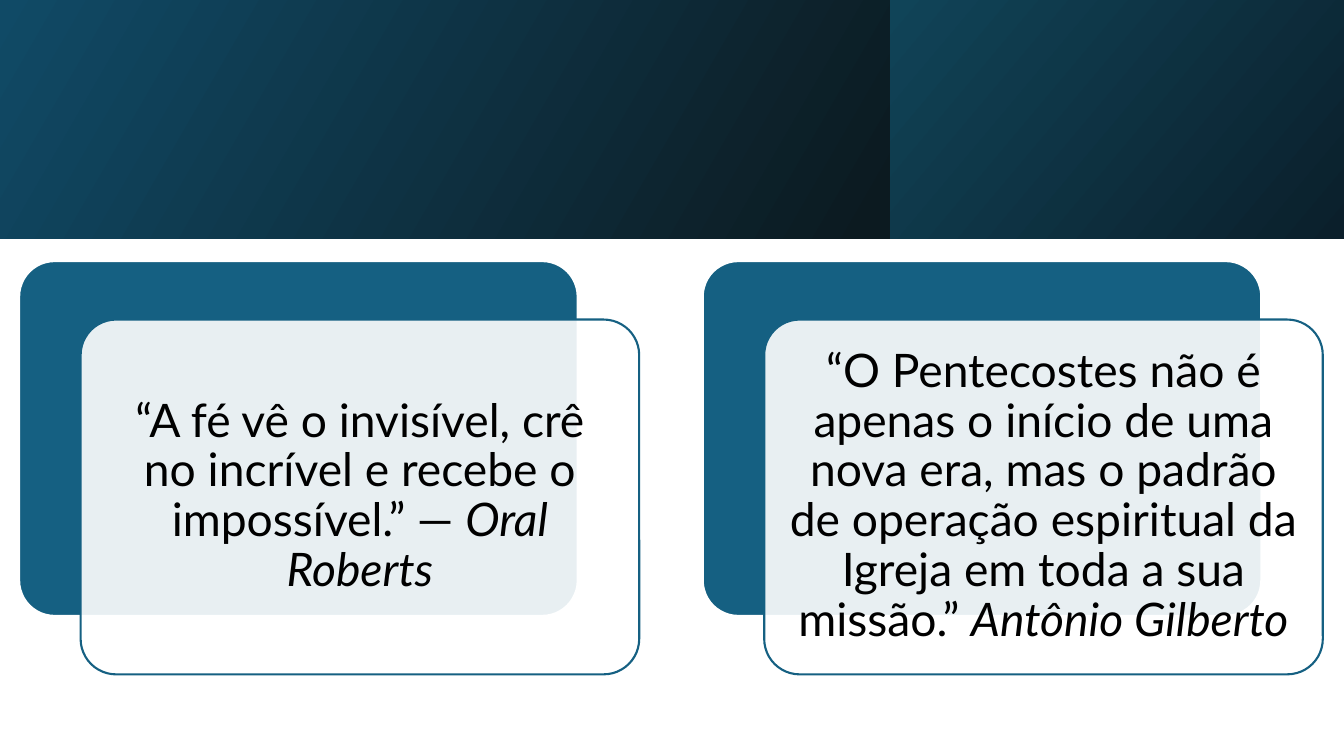
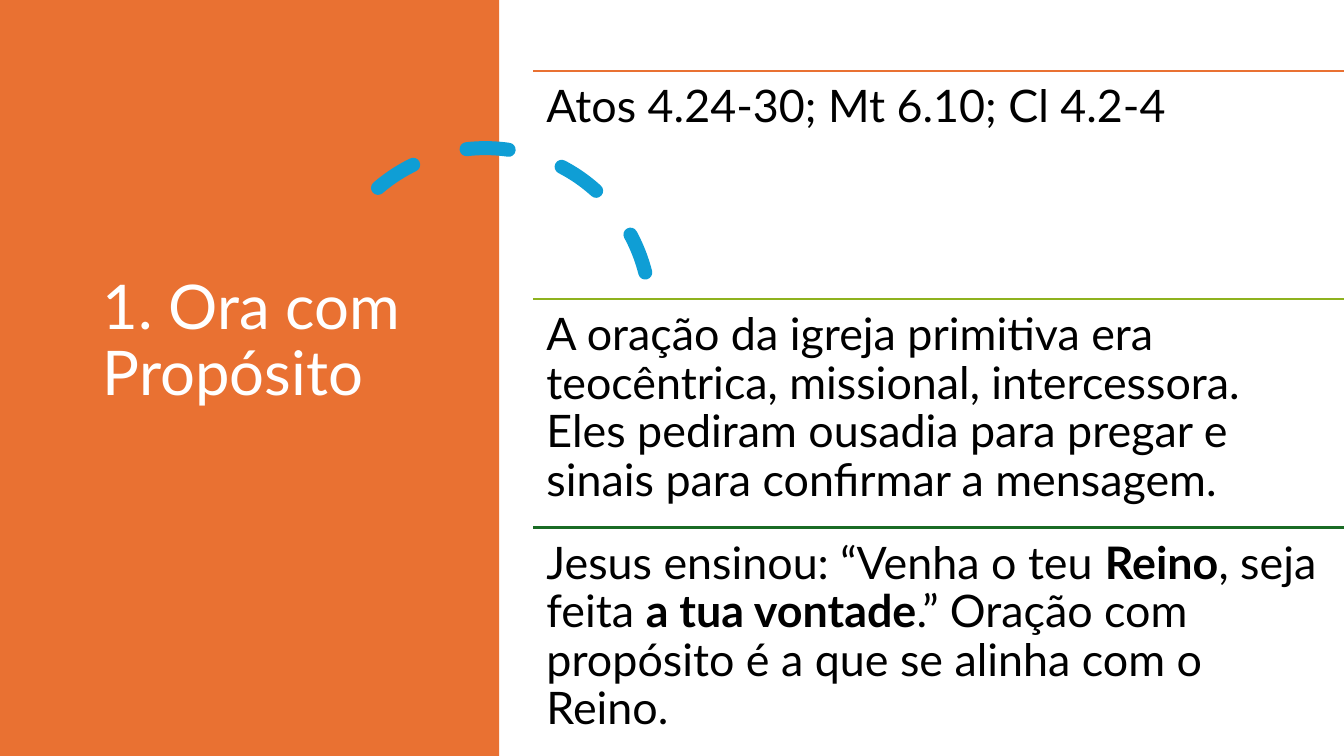
import pptx
import pptx.dml.color
import pptx.enum.dml
import pptx.enum.shapes
import pptx.enum.text
import pptx.oxml.ns
import pptx.util
from lxml import etree

Inches = pptx.util.Inches
Pt = pptx.util.Pt
Shapes = pptx.enum.shapes.MSO_SHAPE
Align = pptx.enum.text.PP_ALIGN
Anchor = pptx.enum.text.MSO_ANCHOR
qn = pptx.oxml.ns.qn

# Shared style
FONT = "Lato"
WIDTH, HEIGHT = 13.33, 7.5
BLACK, WHITE = "000000", "FFFFFF"
TEAL, ORANGE, SKY = "156082", "E97132", "0F9ED5"
LIME, GREEN = "8EB21E", "196B24"
RULE_WEIGHT = 1.5
BLANK_LAYOUT, TITLE_LAYOUT = 6, 5

QUOTES = [
    [("“A fé vê o invisível, crê no incrível e recebe o impossível.” — ", ""),
     ("Oral Roberts", "italic")],
    [("“O Pentecostes não é apenas o início de uma nova era, mas o padrão de "
      "operação espiritual da Igreja em toda a sua missão.” ", ""),
     ("Antônio Gilberto", "italic")],
]
POINTS = [
    (ORANGE, [("Atos 4.24-30; Mt 6.10; Cl 4.2-4", "")]),
    (LIME, [("A oração da igreja primitiva era teocêntrica, missional, "
             "intercessora. Eles pediram ousadia para pregar e sinais para "
             "confirmar a mensagem.", "")]),
    (GREEN, [("Jesus ensinou: “Venha o teu ", ""), ("Reino", "bold"),
             (", seja feita ", ""), ("a tua vontade", "bold"),
             (".” Oração com propósito é a que se alinha com o Reino.", "")]),
]


def rgb(value):
    return pptx.dml.color.RGBColor.from_string(value)


def add_panel(slide, kind, box, fill=None, line=None, weight=RULE_WEIGHT):
    """Preset shape without shadow; no colour means no fill or no line."""
    panel = slide.shapes.add_shape(kind, *map(Inches, box))
    panel.shadow.inherit = False
    if fill:
        panel.fill.solid()
        panel.fill.fore_color.rgb = rgb(fill)
    else:
        panel.fill.background()
    if line:
        panel.line.color.rgb = rgb(line)
        panel.line.width = Pt(weight)
    else:
        panel.line.fill.background()
    return panel


def write(frame, pieces, size, color, align, anchor, inset):
    """One paragraph made of (text, emphasis) pieces."""
    frame.word_wrap = True
    frame.vertical_anchor = anchor
    frame.margin_left = frame.margin_right = Inches(inset)
    frame.margin_top = frame.margin_bottom = Inches(inset)
    paragraph = frame.paragraphs[0]
    paragraph.alignment = align
    paragraph.line_spacing = 0.9
    for text, emphasis in pieces:
        run = paragraph.add_run()
        run.text = text
        run.font.name = FONT
        run.font.size = Pt(size)
        run.font.color.rgb = rgb(color)
        run.font.bold = emphasis == "bold"
        run.font.italic = emphasis == "italic"


def add_gradient(slide, box, start, end, end_at, angle):
    band = add_panel(slide, Shapes.RECTANGLE, box)
    band.fill.gradient()
    band.fill.gradient_angle = angle
    first, last = band.fill.gradient_stops
    first.color.rgb, last.color.rgb = rgb(start), rgb(end)
    first.position, last.position = 0, end_at


def add_header_band(slide, box):
    left, top, width, height = box
    split = 8.83
    add_gradient(slide, box, "104A66", "0C1A20", 0.68, 330)
    add_gradient(slide, (left + split, top, width - split, height),
                 "104458", "0B1F2B", 1, 320)


def add_quote_card(slide, box, quote):
    """Teal card with a translucent quote card shifted over it."""
    left, top, width, height = box
    shift_x, shift_y = 0.61, 0.58
    back = add_panel(slide, Shapes.ROUNDED_RECTANGLE, box, TEAL, WHITE)
    front = add_panel(slide, Shapes.ROUNDED_RECTANGLE,
                      (left + shift_x, top + shift_y, width, height), WHITE, TEAL)
    for card in (back, front):
        card.adjustments[0] = 0.1
    # 90 % opaque front
    fill_color = front.fill._xPr.find(qn("a:solidFill"))[0]
    etree.SubElement(fill_color, qn("a:alpha")).set("val", "90000")
    write(front.text_frame, quote, 33, BLACK, Align.CENTER, Anchor.MIDDLE, 0.14)


def add_title_panel(slide, box, title):
    left, top, width, height = box
    add_panel(slide, Shapes.RECTANGLE, box, ORANGE)
    heading = slide.shapes.title
    heading.left, heading.top = Inches(left + 0.92), Inches(top + 0.7)
    heading.width, heading.height = Inches(width - 1.72), Inches(height - 2.1)
    write(heading.text_frame, [(title, "")], 44, WHITE,
          Align.LEFT, Anchor.MIDDLE, 0.1)


def add_dashed_arc(slide, box):
    arc = add_panel(slide, Shapes.ARC, box, line=SKY, weight=10)
    arc.rotation = 345.8
    # Angles are stored in 60000ths of a degree, adjustments in 100000ths
    arc.adjustments[0] = 243.55 * 0.6
    arc.adjustments[1] = 0
    arc.line.dash_style = pptx.enum.dml.MSO_LINE.DASH
    arc.line._get_or_add_ln().set("cap", "rnd")


def add_ruled_points(slide, box, points):
    """Equal rows, each with a coloured rule above its text."""
    left, top, width, height = box
    row_height = height / len(points)
    for index, (color, pieces) in enumerate(points):
        row_top = top + index * row_height
        rule = slide.shapes.add_connector(
            pptx.enum.shapes.MSO_CONNECTOR.STRAIGHT, Inches(left),
            Inches(row_top), Inches(left + width), Inches(row_top))
        rule.line.color.rgb = rgb(color)
        rule.line.width = Pt(RULE_WEIGHT)
        etree.SubElement(rule._element.spPr, qn("a:effectLst"))
        point = slide.shapes.add_textbox(
            Inches(left), Inches(row_top), Inches(width), Inches(row_height))
        write(point.text_frame, pieces, 32, BLACK, Align.LEFT, Anchor.TOP, 0.13)


def build_quotes_slide(deck):
    slide = deck.slides.add_slide(deck.slide_layouts[BLANK_LAYOUT])
    add_header_band(slide, (0, 0, WIDTH, 2.37))
    for index, quote in enumerate(QUOTES):
        add_quote_card(slide, (0.19 + index * 6.78, 2.59, 5.54, 3.52), quote)


def build_points_slide(deck):
    slide = deck.slides.add_slide(deck.slide_layouts[TITLE_LAYOUT])
    add_title_panel(slide, (0, 0, 4.95, HEIGHT), "1. Ora com Propósito")
    add_dashed_arc(slide, (3.18, 1.47, 3.27, 3.27))
    # Bring the title in front of its panel and the arc
    slide.shapes._spTree.append(slide.shapes.title._element)
    add_ruled_points(slide, (5.29, 0.7, 8.04, 6.8), POINTS)


def main():
    deck = pptx.Presentation()
    deck.slide_width, deck.slide_height = Inches(WIDTH), Inches(HEIGHT)
    build_quotes_slide(deck)
    build_points_slide(deck)
    deck.save("out.pptx")


if __name__ == "__main__":
    main()
